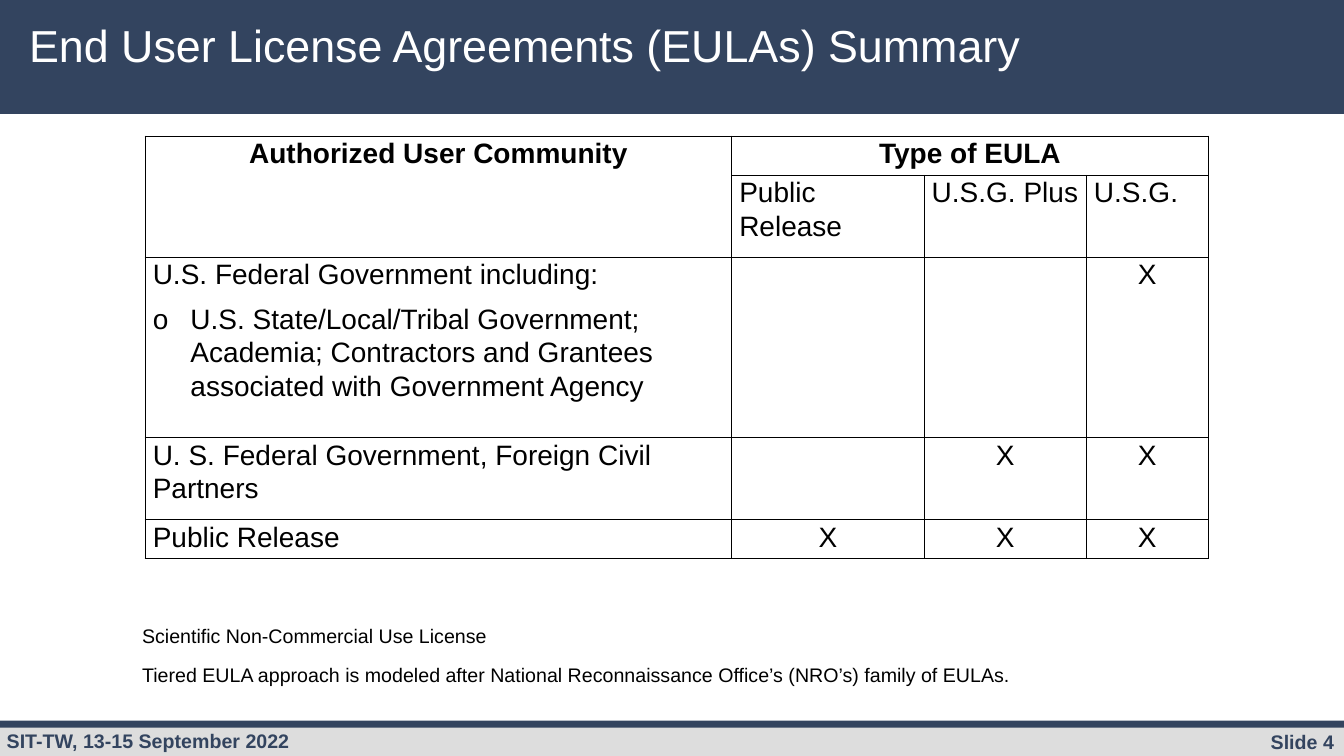
from lxml.etree import SubElement
from pptx import Presentation
from pptx.dml.color import RGBColor
from pptx.enum.shapes import MSO_SHAPE as Shape
from pptx.enum.text import MSO_ANCHOR as Anchor, PP_ALIGN as Align
from pptx.oxml.ns import qn
from pptx.util import Cm, Pt

NAVY = RGBColor(0x33, 0x44, 0x5F)
GRAY = RGBColor(0xDD, 0xDD, 0xDD)
WHITE = RGBColor(0xFF, 0xFF, 0xFF)
BLACK = RGBColor(0, 0, 0)
FONT = "Arial"
SLIDE_WIDTH, SLIDE_HEIGHT = 33.87, 19.05

COLUMN_WIDTHS = [14.78, 4.85, 4.09, 3.07]
ROW_HEIGHTS = [0.99, 2.06, 4.55, 2.06, 0.99]
FEDERAL = "U.S. Federal Government including:"
FEDERAL_DETAIL = ("U.S. State/Local/Tribal Government; Academia; Contractors and "
                  "Grantees associated with Government Agency")
EULA_ROWS = [
    ["Authorized User Community", "Type of EULA", "", ""],
    ["", "Public Release", "U.S.G. Plus", "U.S.G."],
    [f"{FEDERAL}\n{FEDERAL_DETAIL}", "", "", "X"],
    ["U. S. Federal Government, Foreign Civil Partners", "", "X", "X"],
    ["Public Release", "X", "X", "X"],
]
NOTES = [
    "Scientific Non-Commercial Use License",
    "Tiered EULA approach is modeled after National Reconnaissance Office’s "
    "(NRO’s) family of EULAs.",
]


def style_font(paragraph, size, color, bold=False):
    """Apply the slide font to every run of a paragraph."""
    for run in paragraph.runs:
        run.font.name = FONT
        run.font.size = Pt(size)
        run.font.bold = bold
        run.font.color.rgb = color


def add_band(slide, left, top, width, height, color):
    """Draw a plain filled band."""
    band = slide.shapes.add_shape(
        Shape.RECTANGLE, Cm(left), Cm(top), Cm(width), Cm(height))
    band.shadow.inherit = False
    band.fill.solid()
    band.fill.fore_color.rgb = color
    band.line.fill.background()


def add_label(slide, left, top, width, text, color, bold=False, align=Align.LEFT):
    """Add one line of 14 point text."""
    label = slide.shapes.add_textbox(Cm(left), Cm(top), Cm(width), Cm(0.86))
    label.text_frame.word_wrap = True
    label.text_frame.text = text
    paragraph = label.text_frame.paragraphs[0]
    paragraph.alignment = align
    style_font(paragraph, 14, color, bold)


def add_header(slide, left, top, width, height):
    """Draw the header band with the slide title on it."""
    add_band(slide, left, top, width, height, NAVY)
    title = slide.shapes.title
    title.element.getparent().append(title.element)
    title.left, title.top = Cm(left + 0.48), Cm(top + 0.48)
    title.width, title.height = Cm(26.09), Cm(2.16)
    frame = title.text_frame
    frame.text = "End User License Agreements (EULAs) Summary"
    frame.vertical_anchor = Anchor.TOP
    paragraph = frame.paragraphs[0]
    paragraph.alignment = Align.LEFT
    paragraph.line_spacing = 0.9
    style_font(paragraph, 32, WHITE)


def add_footer(slide, left, top, width, height):
    """Draw the footer band with the meeting and the slide number."""
    add_band(slide, left, top, width, height, GRAY)
    add_band(slide, left, top - 0.1, width, 0.18, NAVY)
    add_label(slide, left + width - 5.36, top, 5.36, "Slide 4", NAVY, True, Align.RIGHT)
    add_label(slide, left - 0.08, top - 0.02, 13.69,
              "SIT-TW, 13-15 September 2022", NAVY, True)


def add_borders(cell):
    """Give a cell thin black lines on all sides."""
    properties = cell._tc.get_or_add_tcPr()
    for side in ("lnL", "lnR", "lnT", "lnB"):
        line = SubElement(properties, qn(f"a:{side}"), w=str(Pt(1)))
        fill = SubElement(line, qn("a:solidFill"))
        SubElement(fill, qn("a:srgbClr"), val=str(BLACK))


def add_bullet(paragraph):
    """Turn a paragraph into a hanging item marked with an o."""
    properties = paragraph._p.get_or_add_pPr()
    properties.set("marL", str(Cm(0.95)))
    properties.set("indent", str(Cm(-0.95)))
    color = SubElement(properties, qn("a:buClr"))
    SubElement(color, qn("a:srgbClr"), val=str(BLACK))
    SubElement(properties, qn("a:buFont"), typeface=FONT)
    SubElement(properties, qn("a:buChar"), char="o")


def fill_cell(cell, text, is_heading):
    """Write and format one table cell."""
    add_borders(cell)
    cell.fill.background()
    cell.margin_left = cell.margin_right = Cm(0.19)
    cell.margin_top = cell.margin_bottom = 0
    if not text:
        return
    cell.text_frame.text = text
    for paragraph in cell.text_frame.paragraphs:
        if paragraph.text == FEDERAL_DETAIL:
            add_bullet(paragraph)
        centered = is_heading or text == "X"
        paragraph.alignment = Align.CENTER if centered else Align.LEFT
        paragraph.line_spacing = 1.07
        paragraph.space_after = Pt(8)
        style_font(paragraph, 20, BLACK, is_heading)


def add_eula_table(slide, left, top):
    """Build the table of user communities and EULA types."""
    table = slide.shapes.add_table(
        len(ROW_HEIGHTS), len(COLUMN_WIDTHS), Cm(left), Cm(top),
        Cm(sum(COLUMN_WIDTHS)), Cm(sum(ROW_HEIGHTS))).table
    table.first_row = table.horz_banding = False
    for column, width in zip(table.columns, COLUMN_WIDTHS):
        column.width = Cm(width)
    for row, height in zip(table.rows, ROW_HEIGHTS):
        row.height = Cm(height)
    for r, texts in enumerate(EULA_ROWS):
        for c, text in enumerate(texts):
            fill_cell(table.cell(r, c), text, r == 0)
    table.cell(0, 0).merge(table.cell(1, 0))
    table.cell(0, 1).merge(table.cell(0, 3))


def add_notes(slide, left, top, width):
    """Place the remarks under the table."""
    for i, note in enumerate(NOTES):
        add_label(slide, left, top + i * 0.99, width, note, BLACK)


def main():
    """Build and save the slide."""
    deck = Presentation()
    deck.slide_width, deck.slide_height = Cm(SLIDE_WIDTH), Cm(SLIDE_HEIGHT)
    slide = deck.slides.add_slide(deck.slide_layouts[5])
    add_header(slide, 0, 0, SLIDE_WIDTH, 2.87)
    add_footer(slide, 0, 18.26, SLIDE_WIDTH, 0.79)
    add_eula_table(slide, 3.66, 3.43)
    add_notes(slide, 3.33, 15.6, 27.94)
    deck.save("out.pptx")


if __name__ == "__main__":
    main()
